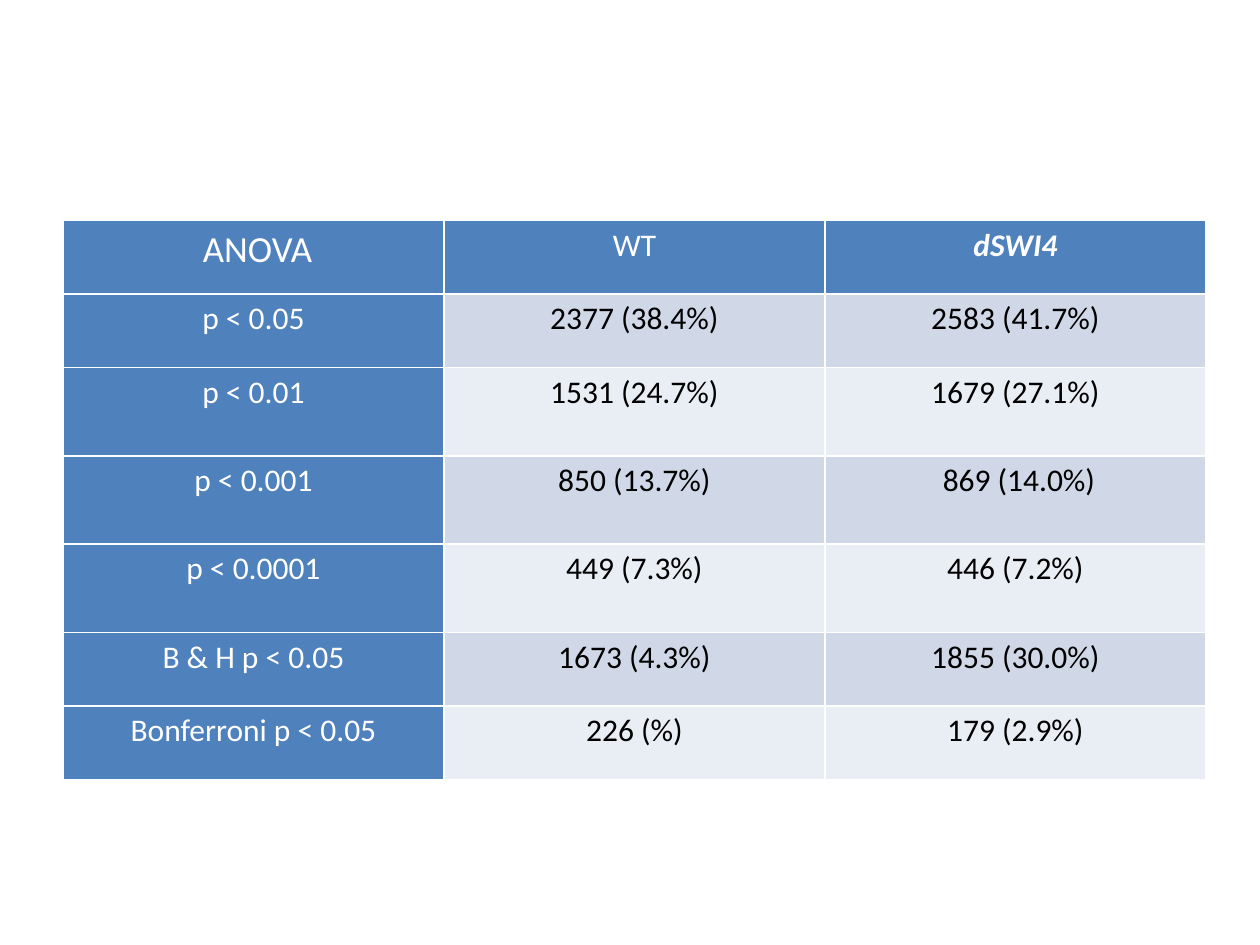
from lxml import etree
from pptx import Presentation
from pptx.dml.color import RGBColor
from pptx.enum.text import PP_ALIGN
from pptx.oxml.ns import qn
from pptx.util import Cm, Pt

CENTER = PP_ALIGN.CENTER
BLANK = 6
FONT = "Calibri"
COLORS = {"head": "4F81BD", "odd": "D0D8E8", "even": "E9EDF4",
          "light": "FFFFFF", "dark": "000000"}

ROWS = [
    (" ANOVA", "WT", "dSWI4"),
    ("p < 0.05", "2377 (38.4%)", "2583 (41.7%)"),
    ("p < 0.01", "1531 (24.7%)", "1679 (27.1%)"),
    ("p < 0.001", "850 (13.7%)", " 869 (14.0%)"),
    ("p < 0.0001", "449 (7.3%)", "446 (7.2%)"),
    ("B & H p < 0.05", "1673 (4.3%)", "1855 (30.0%)"),
    ("Bonferroni p < 0.05", "226 (%)", "179 (2.9%)"),
]
LEFT, TOP, COL = 1.27, 4.45, 7.68
LOW, HIGH = 1.48, 1.78
HEIGHTS = [LOW, LOW, HIGH, HIGH, HIGH, LOW, LOW]


def add_lines(cell):
    """Draw a thin line on each side; lines must come before the fill."""
    props = cell._tc.get_or_add_tcPr()
    for spot, side in enumerate(("a:lnL", "a:lnR", "a:lnT", "a:lnB")):
        line = etree.Element(qn(side), w=str(Pt(1)))
        fill = etree.SubElement(line, qn("a:solidFill"))
        etree.SubElement(fill, qn("a:srgbClr"), val=COLORS["light"])
        props.insert(spot, line)


def fill_cell(cell, text, row, col):
    head = row == 0 or col == 0
    shade = "head" if head else "odd" if row % 2 else "even"
    cell.fill.solid()
    cell.fill.fore_color.rgb = RGBColor.from_string(COLORS[shade])
    add_lines(cell)
    cell.margin_left = cell.margin_right = Cm(0.18)
    cell.margin_top = cell.margin_bottom = 0
    cell.text_frame.text = text
    para = cell.text_frame.paragraphs[0]
    para.alignment = CENTER
    para.line_spacing = 1.15
    font = para.runs[0].font
    font.name = FONT
    font.size = Pt(21 if row == col == 0 else 18)
    font.bold = font.italic = row == 0 and col == 2
    font.color.rgb = RGBColor.from_string(COLORS["light" if head else "dark"])


def main():
    deck = Presentation()
    deck.slide_width, deck.slide_height = Cm(25.4), Cm(19.05)
    slide = deck.slides.add_slide(deck.slide_layouts[BLANK])
    count = len(ROWS[0])
    table = slide.shapes.add_table(
        len(ROWS), count, Cm(LEFT), Cm(TOP),
        Cm(COL * count), Cm(sum(HEIGHTS))).table
    for col in table.columns:
        col.width = Cm(COL)
    for r, (texts, height) in enumerate(zip(ROWS, HEIGHTS)):
        table.rows[r].height = Cm(height)
        for c, text in enumerate(texts):
            fill_cell(table.cell(r, c), text, r, c)
    deck.save("out.pptx")


if __name__ == "__main__":
    main()
